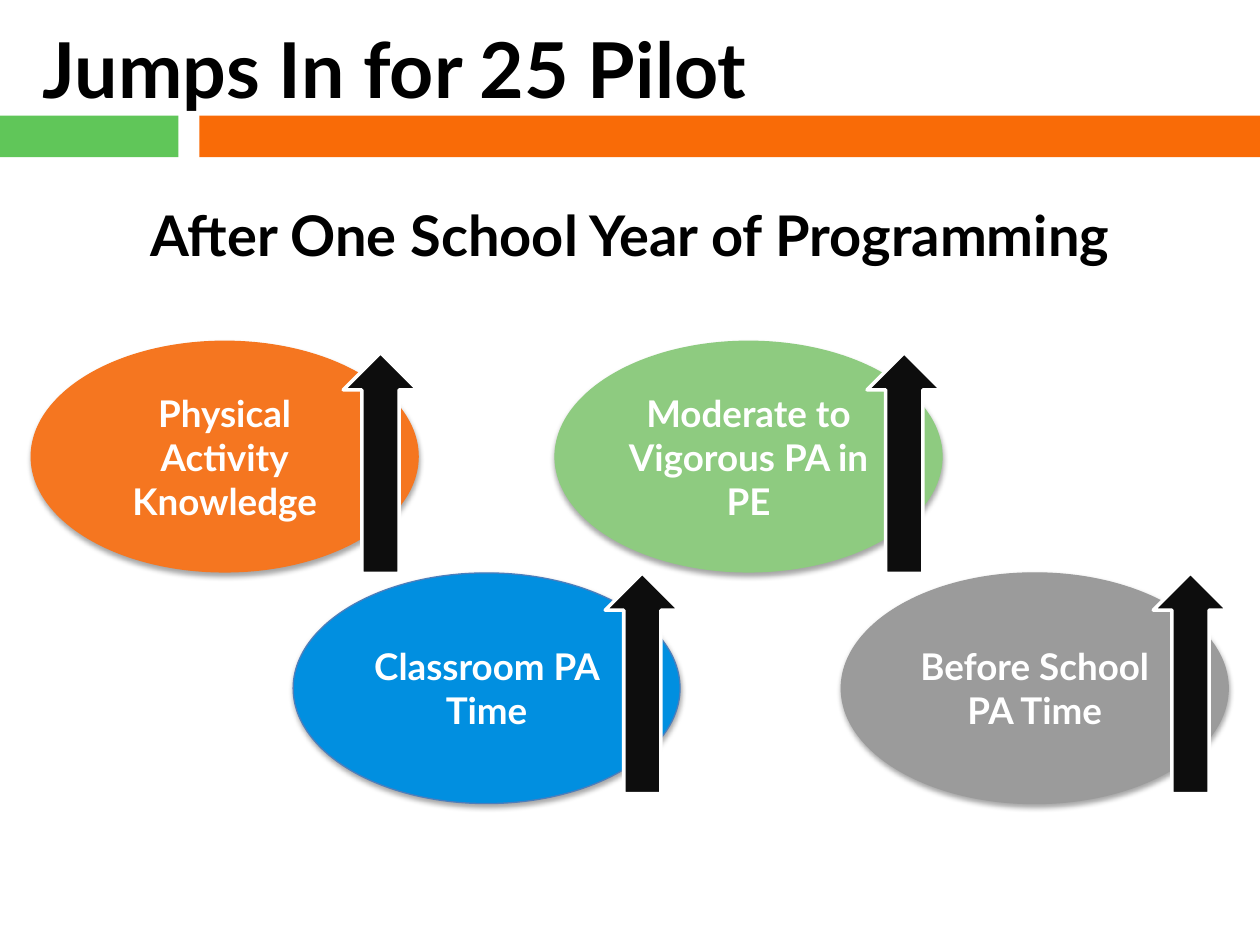
import pptx
import pptx.util
import pptx.dml.color
import pptx.enum.shapes
import pptx.enum.text
import lxml.etree
from pptx.util import Cm

SHAPES = pptx.enum.shapes.MSO_SHAPE
ALIGN = pptx.enum.text.PP_ALIGN
ANCHOR = pptx.enum.text.MSO_ANCHOR
NAMESPACE = "http://schemas.openxmlformats.org/drawingml/2006/main"
SHADOW = f"""<a:effectLst xmlns:a="{NAMESPACE}">
  <a:outerShdw blurRad="39400" dist="22900" dir="5400000" rotWithShape="0">
    <a:srgbClr val="000000"><a:alpha val="35000"/></a:srgbClr>
  </a:outerShdw>
</a:effectLst>"""


def write_text(shape, text, size=21, color="FFFFFF", align=ALIGN.CENTER, anchor=ANCHOR.MIDDLE):
    frame = shape.text_frame
    frame.word_wrap = True
    frame.auto_size = pptx.enum.text.MSO_AUTO_SIZE.NONE
    frame.vertical_anchor = anchor
    frame.text = text
    for paragraph in frame.paragraphs:
        paragraph.alignment = align
        font = paragraph.runs[0].font
        font.name = "Lato"
        font.size = pptx.util.Pt(size)
        font.bold = True
        font.color.rgb = pptx.dml.color.RGBColor.from_string(color)


def draw_shape(kind, left, top, width, height, fill, line=None, line_width=0.75):
    shape = slide.shapes.add_shape(kind, Cm(left), Cm(top), Cm(width), Cm(height))
    shape.shadow.inherit = False
    shape.fill.solid()
    shape.fill.fore_color.rgb = pptx.dml.color.RGBColor.from_string(fill)
    if line:
        shape.line.color.rgb = pptx.dml.color.RGBColor.from_string(line)
        shape.line.width = pptx.util.Pt(line_width)
    else:
        shape.line.fill.background()
    return shape


presentation = pptx.Presentation()
presentation.slide_width = Cm(25.4)
presentation.slide_height = Cm(19.05)
slide = presentation.slides.add_slide(presentation.slide_layouts[5])

title = slide.shapes.title
title.left, title.top, title.width, title.height = Cm(0.61), Cm(0.28), Cm(19.05), Cm(2.16)
write_text(title, "Jumps In for 25 Pilot", size=44, color="000000", align=ALIGN.LEFT)

subtitle = slide.shapes.add_textbox(Cm(0), Cm(3.91), Cm(25.4), Cm(2.44))
write_text(subtitle, "After One School Year of Programming", size=32, color="000000", anchor=ANCHOR.TOP)

upper_top, lower_top = 6.88, 11.55
outcomes = [
    ("Physical Activity\nKnowledge", 0.63, upper_top, "F57620", "F57620"),
    ("Moderate to Vigorous PA in PE", 11.19, upper_top, "8ECB80", "8ECB80"),
    ("Before School PA Time", 16.96, lower_top, "9B9B9B", "9B9B9B"),
    ("Classroom PA Time", 5.91, lower_top, "018FE0", "4B7EBC"),
]
for text, left, top, fill, line in outcomes:
    ellipse = draw_shape(SHAPES.OVAL, left, top, 7.8, 4.65, fill, line)
    properties = ellipse.element.spPr
    properties.remove(properties.find(f"{{{NAMESPACE}}}effectLst"))
    properties.append(lxml.etree.fromstring(SHADOW))
    write_text(ellipse, text)

arrow_tops = {upper_top: 7.11, lower_top: 11.55}
for text, left, top, fill, line in outcomes:
    draw_shape(SHAPES.UP_ARROW, left + 6.29, arrow_tops[top], 1.5, 4.45, "0D0D0D", "FFFFFF", 2)

for left, width, fill in [(0, 3.6, "60C659"), (4.02, 21.38, "F96B07")]:
    draw_shape(SHAPES.RECTANGLE, left, 2.33, width, 0.84, fill)

presentation.save("out.pptx")
